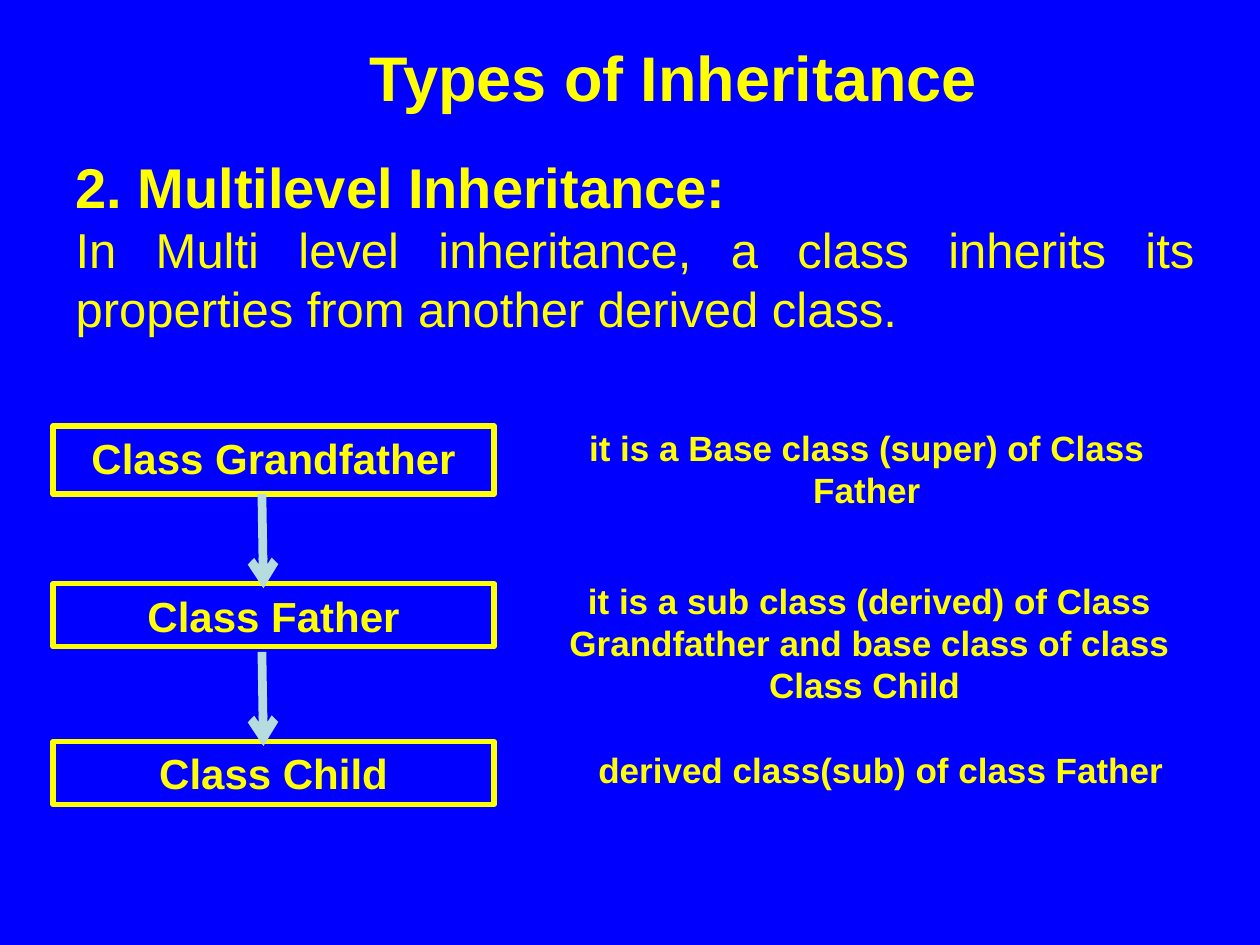
from dataclasses import dataclass

from lxml.etree import SubElement as Sub
from pptx import Presentation
from pptx.dml.color import RGBColor as Rgb
from pptx.enum.shapes import MSO_CONNECTOR as Link, MSO_SHAPE as Kind
from pptx.enum.text import MSO_ANCHOR as Anchor, MSO_AUTO_SIZE as Fit, PP_ALIGN as Align
from pptx.oxml.ns import qn
from pptx.slide import Slide
from pptx.text.text import TextFrame
from pptx.util import Cm, Pt


@dataclass(frozen=True)
class Theme:
    font: str = "Arial"
    back: Rgb = Rgb(0x00, 0x00, 0xFF)
    ink: Rgb = Rgb(0xFF, 0xFF, 0x00)
    arrow: Rgb = Rgb(0xB6, 0xDC, 0xDF)
    title: int = 36
    head: int = 32
    body: int = 28
    label: int = 24
    note: int = 20
    edge: int = 3
    stem: int = 5


@dataclass(frozen=True)
class Area:
    left: float
    top: float
    width: float
    height: float

    def cm(self) -> tuple:
        return Cm(self.left), Cm(self.top), Cm(self.width), Cm(self.height)


@dataclass(frozen=True)
class Level:
    name: str
    height: float
    note: str
    area: Area
    anchor: Anchor = Anchor.TOP


THEME = Theme()
LEFT, TOP, WIDTH, STEP = 1.07, 8.59, 8.89, 3.18
ARROW_X, ARROW_TOP, ARROW_LEN = 5.28, 9.96, 1.9

LEVELS = [
    Level("Class Grandfather", 1.37, "it is a Base class (super) of Class Father",
          Area(10.59, 8.46, 13.77, 1.96), Anchor.MIDDLE),
    Level("Class Father", 1.27,
          "it is a sub class (derived) of Class Grandfather and base class of class Class Child ",
          Area(10.8, 11.56, 13.46, 2.82)),
    Level("Class Child", 1.27, "derived class(sub) of class Father",
          Area(11.23, 14.96, 13.06, 1.12)),
]


def write(frame: TextFrame, text: str, *, size: int, bold: bool = True,
          align: Align = Align.LEFT, anchor: Anchor = Anchor.TOP,
          after: int = 0, wrap: bool = True, more: bool = False) -> None:
    """Fill the frame's first paragraph, or add one when more is set."""
    frame.word_wrap = wrap
    frame.auto_size = Fit.NONE
    frame.vertical_anchor = anchor
    para = frame.add_paragraph() if more else frame.paragraphs[0]
    para.alignment = align
    para.space_before, para.space_after = Pt(0), Pt(after)
    run = para.add_run()
    run.text = text
    font = run.font
    font.name, font.size, font.bold = THEME.font, Pt(size), bold
    font.color.rgb = THEME.ink


def place(shape, area: Area) -> None:
    shape.left, shape.top, shape.width, shape.height = area.cm()


def plain(frame: TextFrame) -> None:
    """Take bullets and indents off every paragraph."""
    for para in frame.paragraphs:
        props = para._p.get_or_add_pPr()
        props.set("marL", "0")
        props.set("indent", "0")
        Sub(props, qn("a:buNone"))


def draw_box(slide: Slide, level: Level, top: float) -> None:
    area = Area(LEFT, top, WIDTH, level.height)
    box = slide.shapes.add_shape(Kind.RECTANGLE, *area.cm())
    box.shadow.inherit = False
    box.fill.background()
    box.line.color.rgb, box.line.width = THEME.ink, Pt(THEME.edge)
    write(box.text_frame, level.name, size=THEME.label, align=Align.CENTER, after=10)


def draw_note(slide: Slide, level: Level) -> None:
    note = slide.shapes.add_textbox(*level.area.cm())
    write(note.text_frame, level.note, size=THEME.note,
          align=Align.CENTER, anchor=level.anchor)


def draw_arrow(slide: Slide, top: float) -> None:
    arrow = slide.shapes.add_connector(
        Link.STRAIGHT, Cm(ARROW_X), Cm(top), Cm(ARROW_X + 0.03), Cm(top + ARROW_LEN))
    arrow.line.color.rgb, arrow.line.width = THEME.arrow, Pt(THEME.stem)
    Sub(arrow.line._get_or_add_ln(), qn("a:tailEnd"), type="arrow")
    Sub(arrow._element.spPr, qn("a:effectLst"))


def main() -> None:
    deck = Presentation()
    deck.slide_width, deck.slide_height = Cm(25.4), Cm(19.05)
    slide = deck.slides.add_slide(deck.slide_layouts[1])
    fill = slide.background.fill
    fill.solid()
    fill.fore_color.rgb = THEME.back

    title, body = slide.placeholders
    place(title, Area(7.19, 0.64, 12.88, 1.8))
    write(title.text_frame, "Types of Inheritance", size=THEME.title, wrap=False)
    place(body, Area(1.27, 2.95, 23.06, 4.01))
    write(body.text_frame, "2. Multilevel Inheritance:", size=THEME.head)
    write(body.text_frame,
          "In Multi level inheritance, a class inherits its properties "
          "from another derived class.",
          size=THEME.body, bold=False, align=Align.JUSTIFY, more=True)
    plain(body.text_frame)

    for row, level in enumerate(LEVELS):
        draw_box(slide, level, TOP + row * STEP)
        draw_note(slide, level)
    for row in range(len(LEVELS) - 1):
        draw_arrow(slide, ARROW_TOP + row * STEP)
    deck.save("out.pptx")


if __name__ == "__main__":
    main()
